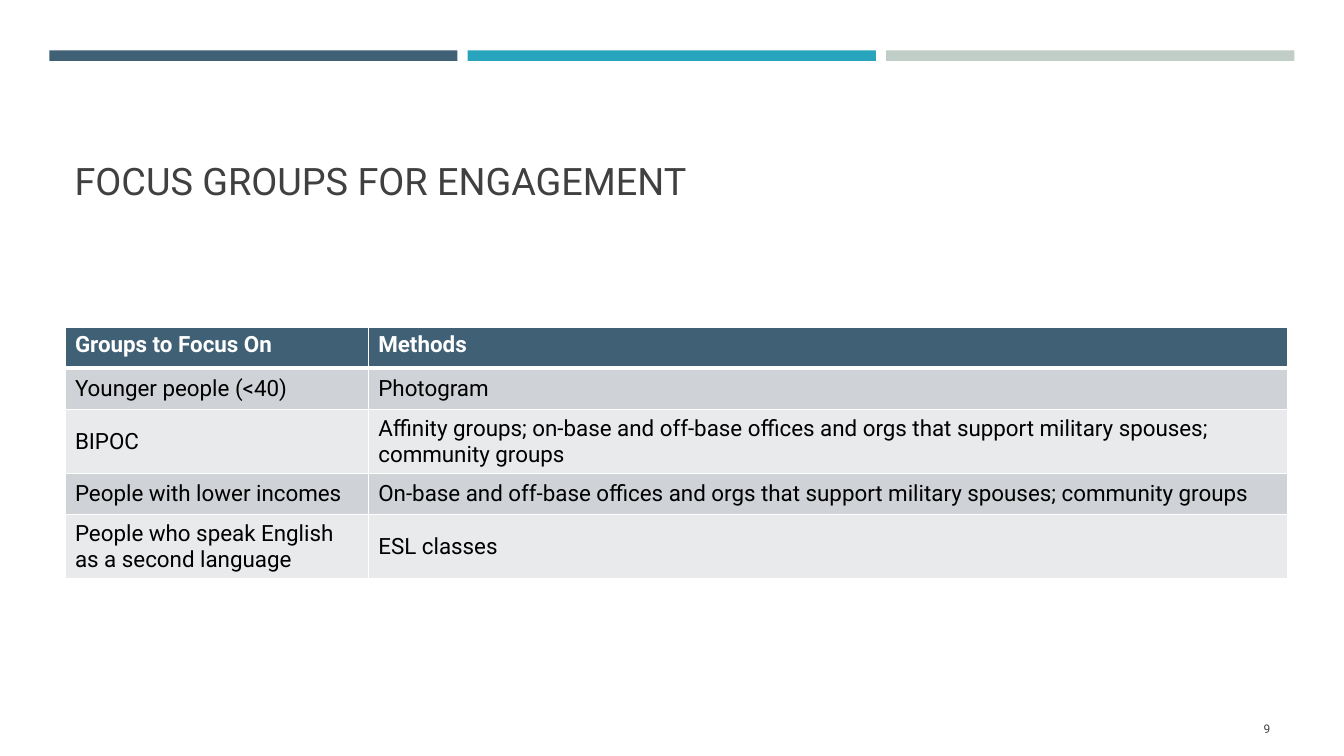
from lxml.etree import SubElement
from pptx import Presentation
from pptx.dml.color import RGBColor
from pptx.enum.shapes import MSO_SHAPE
from pptx.enum.text import MSO_ANCHOR, MSO_AUTO_SIZE, PP_ALIGN
from pptx.oxml.ns import qn
from pptx.util import Pt

FONT = "Roboto"
NAVY, TEAL, SAGE = "3F6075", "28A5BC", "C1CDC7"
WHITE, BLACK, GREY = "FFFFFF", "000000", "404040"
BANDS = ("CFD2D6", "E8EAEC")

FOCUS_GROUPS = [
    ("Groups to Focus On", "Methods"),
    ("Younger people (<40)", "Photogram"),
    ("BIPOC", "Affinity groups; on-base and off-base offices and orgs "
              "that support military spouses; community groups"),
    ("People with lower incomes", "On-base and off-base offices and orgs "
                                  "that support military spouses; community groups"),
    ("People who speak English as a second language", "ESL classes"),
]
COLUMN_WIDTHS = (216.7, 656.6)
ROW_HEIGHT = 29.5


def color(hex_code):
    return RGBColor.from_string(hex_code)


def write(frame, text, size, hex_code, bold=False, align=PP_ALIGN.LEFT):
    frame.text = text
    paragraph = frame.paragraphs[0]
    paragraph.alignment = align
    font = paragraph.runs[0].font
    font.name, font.size, font.bold = FONT, Pt(size), bold
    font.color.rgb = color(hex_code)


def place(shape, left, top, width, height):
    shape.left, shape.top = Pt(left), Pt(top)
    shape.width, shape.height = Pt(width), Pt(height)


def add_header_bars(slide):
    for index, fill in enumerate((NAVY, TEAL, SAGE)):
        bar = slide.shapes.add_shape(
            MSO_SHAPE.RECTANGLE, Pt(35.2 + 298.9 * index), Pt(36), Pt(291.6), Pt(7.5))
        bar.shadow.inherit = False
        bar.fill.solid()
        bar.fill.fore_color.rgb = color(fill)
        bar.line.fill.background()


def set_title(slide, text):
    title = slide.shapes.title
    place(title, 46.1, 55.4, 868.3, 93.6)
    frame = title.text_frame
    write(frame, text, 27, GREY)
    frame.word_wrap = True
    frame.auto_size = MSO_AUTO_SIZE.NONE
    frame.vertical_anchor = MSO_ANCHOR.BOTTOM
    frame.paragraphs[0].line_spacing = 0.9


def add_page_number(slide, number):
    box = slide.shapes.add_textbox(Pt(831.6), Pt(506.2), Pt(82.8), Pt(28.8))
    frame = box.text_frame
    frame.word_wrap = True
    frame.vertical_anchor = MSO_ANCHOR.MIDDLE
    write(frame, number, 8.5, GREY, align=PP_ALIGN.RIGHT)


def set_borders(cell, bottom_width, top_width):
    properties = cell._tc.get_or_add_tcPr()
    widths = {"lnL": 1, "lnR": 1, "lnT": top_width, "lnB": bottom_width}
    for position, (side, width) in enumerate(widths.items()):
        line = SubElement(properties, qn(f"a:{side}"), w=str(Pt(width)))
        properties.insert(position, line)
        fill = SubElement(line, qn("a:solidFill"))
        SubElement(fill, qn("a:srgbClr"), val=WHITE)


def add_focus_table(slide):
    frame = slide.shapes.add_table(
        len(FOCUS_GROUPS), len(COLUMN_WIDTHS), Pt(46.4), Pt(233.6),
        Pt(sum(COLUMN_WIDTHS)), Pt(ROW_HEIGHT * len(FOCUS_GROUPS)))
    table = frame.table
    for column, width in zip(table.columns, COLUMN_WIDTHS):
        column.width = Pt(width)
    for row_index, texts in enumerate(FOCUS_GROUPS):
        is_header = row_index == 0
        table.rows[row_index].height = Pt(ROW_HEIGHT)
        for column_index, text in enumerate(texts):
            cell = table.cell(row_index, column_index)
            write(cell.text_frame, text, 16, WHITE if is_header else BLACK, is_header)
            cell.vertical_anchor = MSO_ANCHOR.TOP if is_header else MSO_ANCHOR.MIDDLE
            cell.fill.solid()
            cell.fill.fore_color.rgb = color(
                NAVY if is_header else BANDS[(row_index - 1) % 2])
            set_borders(cell, 3 if is_header else 1, 3 if row_index == 1 else 1)
    frame.height = Pt(178.6)


def main():
    presentation = Presentation()
    presentation.slide_width, presentation.slide_height = Pt(960), Pt(540)
    slide = presentation.slides.add_slide(presentation.slide_layouts[5])
    add_header_bars(slide)
    set_title(slide, "FOCUS GROUPS FOR ENGAGEMENT")
    add_page_number(slide, "9")
    add_focus_table(slide)
    presentation.save("out.pptx")


if __name__ == "__main__":
    main()
